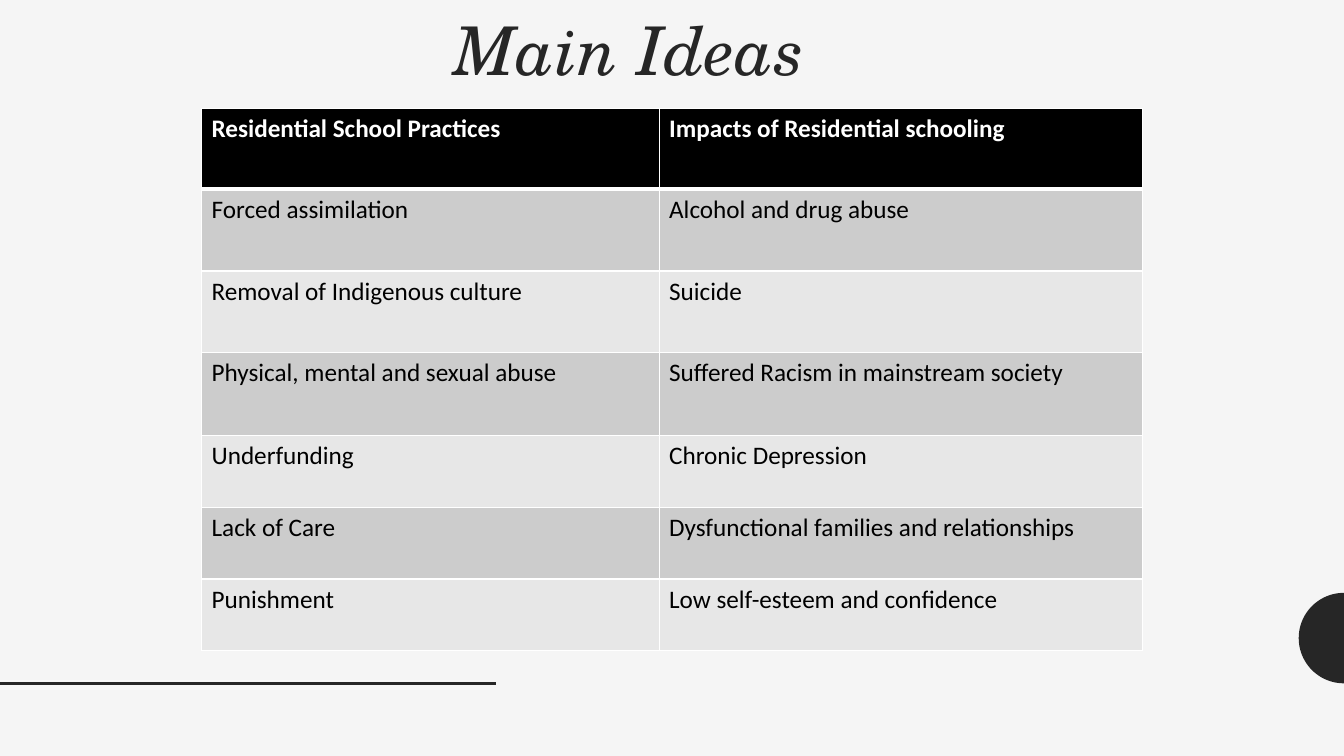
from math import cos, pi, sin

from lxml import etree
from pptx import Presentation
from pptx.dml.color import RGBColor
from pptx.enum.shapes import MSO_CONNECTOR
from pptx.enum.text import MSO_ANCHOR, MSO_AUTO_SIZE, PP_ALIGN
from pptx.oxml import parse_xml
from pptx.oxml.ns import nsdecls, qn
from pptx.util import Cm, Pt

BACKGROUND = RGBColor(0xF5, 0xF5, 0xF5)
DARK = RGBColor(0x26, 0x26, 0x26)
BLACK = RGBColor(0x00, 0x00, 0x00)
WHITE = RGBColor(0xFF, 0xFF, 0xFF)
BANDS = [RGBColor(0xE7, 0xE7, 0xE7), RGBColor(0xCC, 0xCC, 0xCC)]
STRAIGHT = MSO_CONNECTOR.STRAIGHT
TOP = MSO_ANCHOR.TOP
NO_AUTOFIT = MSO_AUTO_SIZE.NONE
LEFT, RIGHT = PP_ALIGN.LEFT, PP_ALIGN.RIGHT

ROWS = [
    ("Residential School Practices", "Impacts of Residential schooling"),
    ("Forced assimilation", "Alcohol and drug abuse"),
    ("Removal of Indigenous culture", "Suicide"),
    ("Physical, mental and sexual abuse", "Suffered Racism in mainstream society"),
    ("Underfunding", "Chronic Depression"),
    ("Lack of Care", "Dysfunctional families and relationships"),
    ("Punishment", "Low self-esteem and confidence"),
]
COLUMN_WIDTHS = [11.53, 12.19]
ROW_HEIGHTS = [2.03, 2.06, 2.06, 2.08, 1.81, 1.81, 1.81]


def write(tf, text, font="Calibri", size=18, color=BLACK, bold=False,
          italic=False, align=LEFT, spacing=1.0):
    p = tf.paragraphs[0]
    p.alignment = align
    p.line_spacing = spacing
    r = p.add_run()
    r.text = text
    r.font.name = font
    r.font.size = Pt(size)
    r.font.color.rgb = color
    r.font.bold = bold
    r.font.italic = italic


def add_border(cell, side, width):
    cell._tc.get_or_add_tcPr().append(parse_xml(
        f'<a:ln{side} {nsdecls("a")} w="{Pt(width)}"><a:solidFill>'
        f'<a:srgbClr val="{WHITE}"/></a:solidFill></a:ln{side}>'))


prs = Presentation()
prs.slide_width, prs.slide_height = Cm(33.87), Cm(19.05)
s = prs.slides.add_slide(prs.slide_layouts[5])
s.background.fill.solid()
s.background.fill.fore_color.rgb = BACKGROUND

# Half circle on the right edge
center_x, center_y, radius, steps = 33.87, 16.08, 1.14, 48
arc = [(Cm(center_x - radius * sin(pi * i / steps)),
        Cm(center_y - radius * cos(pi * i / steps))) for i in range(steps + 1)]
builder = s.shapes.build_freeform(*arc[0])
builder.add_line_segments(arc[1:], close=True)
half_circle = builder.convert_to_shape()
half_circle.shadow.inherit = False
half_circle.fill.solid()
half_circle.fill.fore_color.rgb = DARK
half_circle.line.fill.background()

# Rule at the bottom left
rule = s.shapes.add_connector(STRAIGHT, 0, Cm(17.22), Cm(12.5), Cm(17.22))
rule.line.color.rgb = DARK
rule.line.width = Pt(2)
etree.SubElement(rule._element.spPr, qn("a:effectLst"))

# Title
title = s.shapes.title
title.left, title.top = Cm(9.88), Cm(0.3)
title.width, title.height = Cm(10.64), Cm(13.77)
tf = title.text_frame
tf.word_wrap = True
tf.auto_size = NO_AUTOFIT
tf.vertical_anchor = TOP
write(tf, "Main Ideas", font="TeX Gyre Schola", size=48, color=DARK,
      italic=True, align=RIGHT, spacing=0.9)

# Table of practices and impacts
table = s.shapes.add_table(
    len(ROWS), len(COLUMN_WIDTHS), Cm(5.08), Cm(2.74),
    Cm(sum(COLUMN_WIDTHS)), Cm(sum(ROW_HEIGHTS))).table
for column, width in zip(table.columns, COLUMN_WIDTHS):
    column.width = Cm(width)
for i, (texts, height) in enumerate(zip(ROWS, ROW_HEIGHTS)):
    table.rows[i].height = Cm(height)
    header = i == 0
    for j, text in enumerate(texts):
        cell = table.cell(i, j)
        add_border(cell, "L", 1)
        add_border(cell, "R", 1)
        add_border(cell, "T", 3 if i == 1 else 1)
        add_border(cell, "B", 3 if header else 1)
        cell.fill.solid()
        cell.fill.fore_color.rgb = BLACK if header else BANDS[i % 2]
        write(cell.text_frame, text, color=WHITE if header else BLACK, bold=header)

prs.save("out.pptx")
